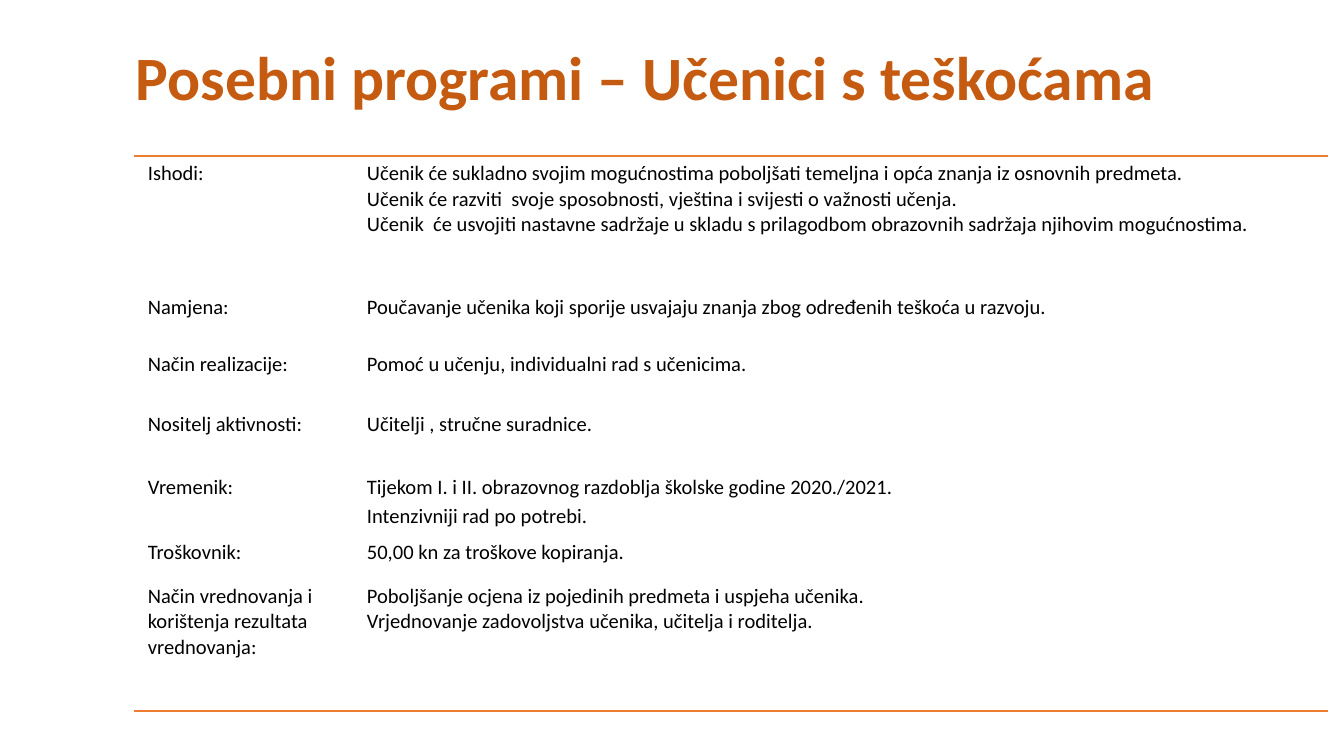
from dataclasses import dataclass

from lxml import etree
from pptx import Presentation
from pptx.dml.color import RGBColor
from pptx.enum import text
from pptx.oxml import ns
from pptx.util import Emu, Pt

PX = 4572


@dataclass(frozen=True)
class Theme:
    font: str = "Calibri"
    title_size: int = 33
    body_size: int = 11
    title: str = "C55A11"
    body: str = "000000"
    rule: str = "ED7D31"
    rule_width: int = 1


THEME = Theme()
COLUMNS = [326, 1450]
ROWS = [
    (199, "Ishodi:", [
        "Učenik će sukladno svojim mogućnostima poboljšati temeljna i opća znanja iz osnovnih predmeta.",
        "Učenik će razviti  svoje sposobnosti, vještina i svijesti o važnosti učenja.",
        "Učenik  će usvojiti nastavne sadržaje u skladu s prilagodbom obrazovnih sadržaja njihovim mogućnostima.",
    ]),
    (84, "Namjena:", ["Poučavanje učenika koji sporije usvajaju znanja zbog određenih teškoća u razvoju."]),
    (90, "Način realizacije:", ["Pomoć u učenju, individualni rad s učenicima."]),
    (93, "Nositelj aktivnosti:", ["Učitelji , stručne suradnice."]),
    (97, "Vremenik:", [
        "Tijekom I. i II. obrazovnog razdoblja školske godine 2020./2021.",
        "Intenzivniji rad po potrebi.",
    ]),
    (66, "Troškovnik:", ["50,00 kn za troškove kopiranja."]),
    (197, "Način vrednovanja i korištenja rezultata vrednovanja:", [
        "Poboljšanje ocjena iz pojedinih predmeta i uspjeha učenika.",
        "Vrjednovanje zadovoljstva učenika, učitelja i roditelja.",
    ]),
]
SPACED_LINE = "Intenzivniji rad po potrebi."


def px(n):
    return Emu(n * PX)


def style_paragraph(p, size, color, bold=False):
    for r in p.runs:
        r.font.name = THEME.font
        r.font.size = Pt(size)
        r.font.bold = bold
        r.font.color.rgb = RGBColor.from_string(color)


def set_borders(cell, ruled_sides):
    tc_pr = cell._tc.get_or_add_tcPr()
    for i, side in enumerate(["lnL", "lnR", "lnT", "lnB"]):
        ln = etree.Element(ns.qn(f"a:{side}"), w=str(Pt(THEME.rule_width)))
        if side in ruled_sides:
            fill = etree.SubElement(ln, ns.qn("a:solidFill"))
            etree.SubElement(fill, ns.qn("a:srgbClr"), val=THEME.rule)
        else:
            etree.SubElement(ln, ns.qn("a:noFill"))
        tc_pr.insert(i, ln)


def fill_cell(cell, lines, ruled_sides):
    cell.fill.background()
    cell.margin_left = cell.margin_right = px(20)
    cell.margin_top = cell.margin_bottom = px(8)
    set_borders(cell, ruled_sides)
    cell.text_frame.text = "\n".join(lines)
    for p in cell.text_frame.paragraphs:
        style_paragraph(p, THEME.body_size, THEME.body)
        if p.text == SPACED_LINE:
            p.space_before = Pt(2)


def place_title(s, left, top, width, height):
    sp = s.shapes.title
    sp.left, sp.top, sp.width, sp.height = map(px, (left, top, width, height))
    tf = sp.text_frame
    tf.text = "Posebni programi – Učenici s teškoćama"
    tf.word_wrap = True
    tf.auto_size = text.MSO_AUTO_SIZE.NONE
    tf.vertical_anchor = text.MSO_ANCHOR.MIDDLE
    p = tf.paragraphs[0]
    p.alignment = text.PP_ALIGN.LEFT
    p.line_spacing = 0.9
    style_paragraph(p, THEME.title_size, THEME.title, bold=True)


def place_programme_table(s, left, top):
    width, height = sum(COLUMNS), sum(row[0] for row in ROWS)
    table = s.shapes.add_table(len(ROWS), len(COLUMNS), *map(px, (left, top, width, height))).table
    table.first_row = table.horz_banding = False
    for column, column_width in zip(table.columns, COLUMNS):
        column.width = px(column_width)
    ruled = {0: ["lnT"], len(ROWS) - 1: ["lnB"]}
    for i, (row_height, label, lines) in enumerate(ROWS):
        table.rows[i].height = px(row_height)
        for cell, content in zip(table.rows[i].cells, ([label], lines)):
            fill_cell(cell, content, ruled.get(i, []))


def main():
    prs = Presentation()
    prs.slide_width, prs.slide_height = px(2000), px(1125)
    s = prs.slides.add_slide(prs.slide_layouts[5])
    place_title(s, 182, 11, 1724, 218)
    place_programme_table(s, 200, 232)
    prs.save("out.pptx")


if __name__ == "__main__":
    main()
